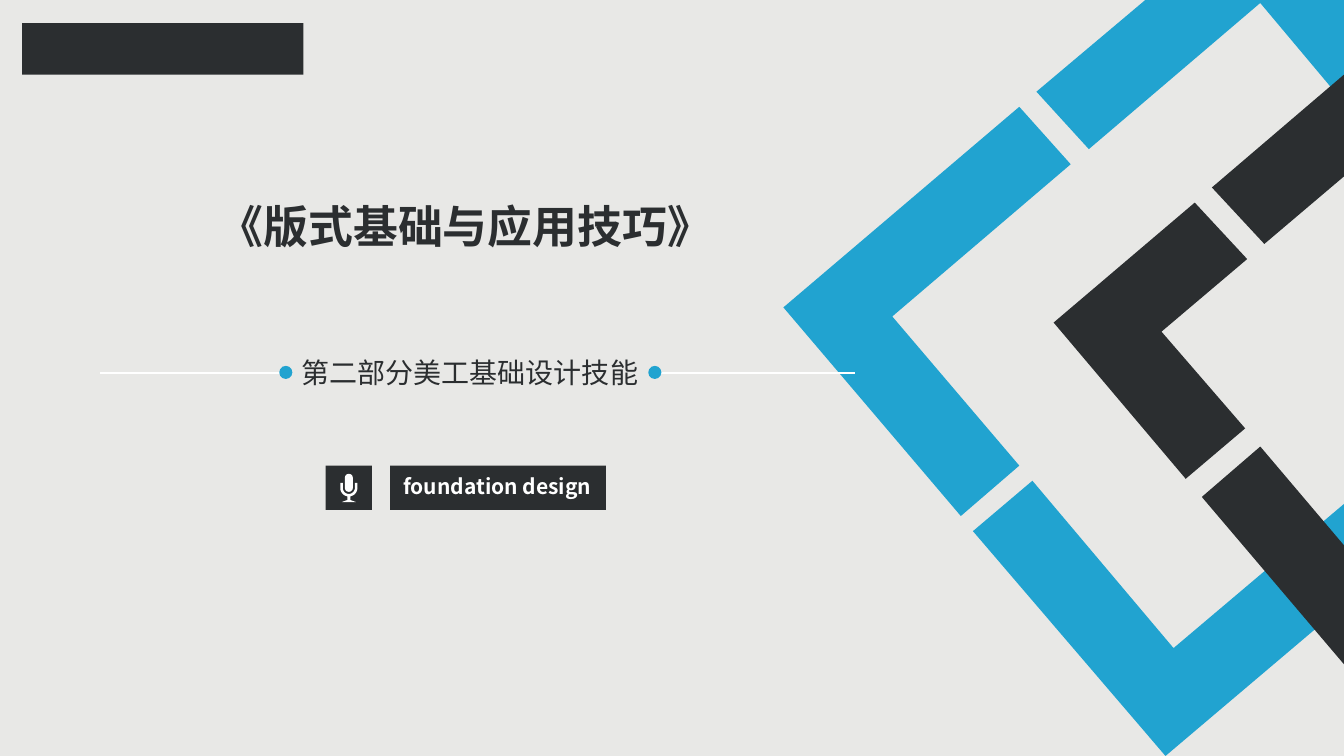
from math import cos, pi, sin

from lxml.etree import SubElement
from pptx import Presentation
from pptx.dml.color import RGBColor as Rgb
from pptx.enum.shapes import MSO_CONNECTOR as Link, MSO_SHAPE as Kind
from pptx.enum.text import MSO_ANCHOR as Anchor, PP_ALIGN as Align
from pptx.oxml.ns import qn
from pptx.util import Inches, Pt

COLS, ROWS = 13.33, 7.5
WIDE, HIGH = Inches(COLS), Inches(ROWS)
FONT = "Noto Sans CJK SC"
HUES = {"back": "E8E8E6", "blue": "21A3D0", "dark": "2B2E30", "white": "FFFFFF"}

BLUE_BANDS = [
    [(10.24, 4.77), (11.64, 6.43), (13.33, 5), (13.33, 6), (11.56, 7.5), (9.65, 5.27)],
    [(10.11, 1.06), (10.62, 1.63), (8.85, 3.14), (10.11, 4.62), (9.53, 5.12), (7.77, 3.05)],
    [(11.36, 0), (13.33, 0), (13.33, 1.02), (12.5, 0.03), (10.8, 1.48), (10.28, 0.91)],
]
DARK_BANDS = [
    [(12.5, 4.43), (13.33, 5.41), (13.33, 6.59), (11.92, 4.93)],
    [(11.85, 2.01), (12.37, 2.57), (11.52, 3.29), (12.35, 4.25), (11.76, 4.75), (10.45, 3.2)],
    [(13.33, 0.74), (13.33, 1.75), (12.54, 2.42), (12.02, 1.86)],
]


def tint(name):
    return Rgb.from_string(HUES[name])


def across(col):
    return round(WIDE * col / COLS)


def down(row):
    return round(HIGH * row / ROWS)


def box(left, top, width, height):
    return across(left), down(top), across(width), down(height)


def paint(shape, hue):
    shape.shadow.inherit = False
    shape.fill.solid()
    shape.fill.fore_color.rgb = tint(hue)
    shape.line.fill.background()


def block(slide, kind, area, hue):
    shape = slide.shapes.add_shape(kind, *box(*area))
    paint(shape, hue)
    return shape


def bands(slide, loops, hue):
    """Draw closed outlines as one filled shape."""
    grid = [[(across(x), down(y)) for x, y in loop] for loop in loops]
    form = slide.shapes.build_freeform(*grid[0][0])
    for spot, loop in enumerate(grid):
        if spot:
            form.move_to(*loop[0])
        form.add_line_segments(loop[1:], close=True)
    paint(form.convert_to_shape(), hue)


def rule(slide, start, end, row):
    line = slide.shapes.add_connector(
        Link.STRAIGHT, across(start), down(row), across(end), down(row))
    line.line.color.rgb = tint("white")
    line.line.width = Pt(1.5)
    SubElement(line._element.spPr, qn("a:effectLst"))


def write(shape, area, text, size, hue, bold=False, align=Align.LEFT):
    shape.left, shape.top, shape.width, shape.height = box(*area)
    frame = shape.text_frame
    frame.text = text
    frame.word_wrap = True
    frame.vertical_anchor = Anchor.TOP
    para = frame.paragraphs[0]
    para.alignment = align
    para.space_before = Pt(0)
    font = para.runs[0].font
    font.name, font.size, font.bold = FONT, Pt(size), bold
    font.color.rgb = tint(hue)
    props = para.runs[0]._r.get_or_add_rPr()
    SubElement(props, qn("a:ea")).set("typeface", FONT)


def arc(mid, row, size, start, end, steps=16):
    turns = [start + (end - start) * n / steps for n in range(steps + 1)]
    return [(mid + size * cos(t), row + size * sin(t)) for t in turns]


def mic(slide, mid, row):
    """Draw a microphone whose cradle is centred on the given point."""
    block(slide, Kind.ROUNDED_RECTANGLE, (mid - 0.04, row - 0.14, 0.08, 0.18),
          "white").adjustments[0] = 0.5
    rim = row - 0.05
    stem = [(0.015, 0.09), (0.015, 0.12), (0.07, 0.14),
            (-0.07, 0.14), (-0.015, 0.12), (-0.015, 0.09)]
    cradle = [(mid + 0.06, rim), (mid + 0.085, rim)]
    cradle += arc(mid, row, 0.085, 0, pi / 2 - 0.18)
    cradle += [(mid + x, row + y) for x, y in stem]
    cradle += arc(mid, row, 0.085, pi / 2 + 0.18, pi)
    cradle += [(mid - 0.085, rim), (mid - 0.06, rim)]
    cradle += arc(mid, row, 0.06, pi, 0)
    bands(slide, [cradle], "white")


def main():
    deck = Presentation()
    deck.slide_width, deck.slide_height = WIDE, HIGH
    slide = deck.slides.add_slide(deck.slide_layouts[0])
    slide.background.fill.solid()
    slide.background.fill.fore_color.rgb = tint("back")

    bands(slide, BLUE_BANDS, "blue")
    bands(slide, DARK_BANDS, "dark")
    for dot, start, end in [(2.77, 2.8, 0.99), (6.43, 6.56, 8.48)]:
        rule(slide, start, end, 3.7)
        block(slide, Kind.OVAL, (dot, 3.63, 0.13, 0.13), "blue")
    for area in [(0.22, 0.23, 2.79, 0.51), (3.23, 4.62, 0.46, 0.44),
                 (3.87, 4.62, 2.14, 0.44)]:
        block(slide, Kind.RECTANGLE, area, "dark")
    mic(slide, 3.46, 4.84)

    title, part = slide.placeholders
    write(title, (2.07, 1.92, 5.57, 0.64), "《版式基础与应用技巧》", 32, "dark", bold=True)
    write(part, (2.89, 3.48, 3.54, 0.44), "第二部分美工基础设计技能", 20, "dark",
          align=Align.CENTER)
    area = (3.9, 4.65, 2.35, 0.35)
    label = slide.shapes.add_textbox(*box(*area))
    write(label, area, "foundation design", 15, "white", bold=True)
    deck.save("out.pptx")


if __name__ == "__main__":
    main()
